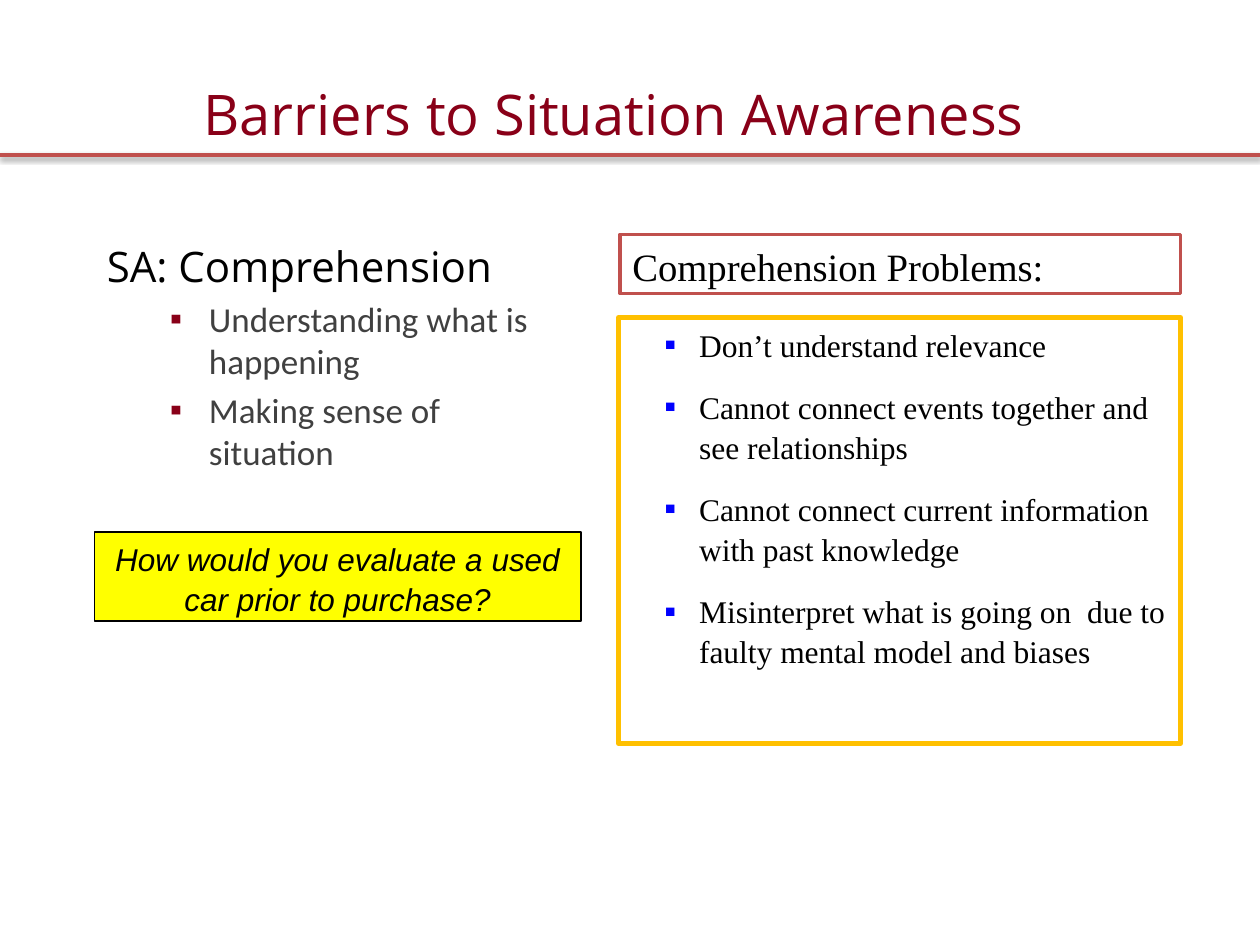
"""Build the slide on comprehension barriers to situation awareness."""
from dataclasses import dataclass
from typing import Optional

from lxml.etree import SubElement
from pptx import Presentation
from pptx.dml.color import RGBColor
from pptx.enum.shapes import MSO_CONNECTOR as Connector, MSO_SHAPE as Shape
from pptx.enum.text import MSO_ANCHOR as Anchor, PP_ALIGN as Align
from pptx.oxml.ns import qn
from pptx.util import Inches, Pt

MAROON, BRICK, GOLD, YELLOW = "890018", "C0504D", "FFC000", "FFFF00"
BLACK, WHITE, GREY, BLUE = "000000", "FFFFFF", "404040", "0000FF"


@dataclass(frozen=True)
class Bullet:
    char: str
    color: str
    percent: int
    margin: float
    hanging: float


@dataclass(frozen=True)
class Style:
    font: str
    size: float
    color: str = BLACK
    italic: bool = False
    align: Align = Align.LEFT
    before: float = 0
    spacing: float = 1.0
    bullet: Optional[Bullet] = None


@dataclass(frozen=True)
class Panel:
    left: float
    top: float
    width: float
    height: float
    line: str
    weight: float
    fill: Optional[str]
    anchor: Anchor
    style: Style
    texts: tuple[str, ...]


def rgb(color: str) -> RGBColor:
    return RGBColor.from_string(color)


def place(shape, left: float, top: float, width: float, height: float) -> None:
    shape.left, shape.top = Inches(left), Inches(top)
    shape.width, shape.height = Inches(width), Inches(height)


def add_bullet(paragraph, bullet: Bullet) -> None:
    props = paragraph._p.get_or_add_pPr()
    props.set("marL", str(Inches(bullet.margin)))
    props.set("indent", str(-Inches(bullet.hanging)))
    SubElement(SubElement(props, qn("a:buClr")), qn("a:srgbClr"), val=bullet.color)
    SubElement(props, qn("a:buSzPct"), val=str(bullet.percent * 1000))
    SubElement(props, qn("a:buFont"), typeface="Arial")
    SubElement(props, qn("a:buChar"), char=bullet.char)


def write(frame, lines: list[tuple[str, Style]], anchor: Anchor) -> None:
    frame.word_wrap = True
    frame.vertical_anchor = anchor
    for index, (text, style) in enumerate(lines):
        paragraph = frame.add_paragraph() if index else frame.paragraphs[0]
        paragraph.alignment = style.align
        paragraph.line_spacing = style.spacing
        paragraph.space_before = Pt(style.before if index else 0)
        if style.bullet:
            paragraph.level = 1
            add_bullet(paragraph, style.bullet)
        run = paragraph.add_run()
        run.text = text
        run.font.name, run.font.size = style.font, Pt(style.size)
        run.font.italic = style.italic
        run.font.color.rgb = rgb(style.color)


def add_panel(slide, panel: Panel) -> None:
    box = slide.shapes.add_shape(Shape.RECTANGLE, 0, 0, 0, 0)
    place(box, panel.left, panel.top, panel.width, panel.height)
    box.shadow.inherit = False
    if panel.fill:
        box.fill.solid()
        box.fill.fore_color.rgb = rgb(panel.fill)
    else:
        box.fill.background()
    box.line.color.rgb = rgb(panel.line)
    box.line.width = Pt(panel.weight)
    write(box.text_frame, [(text, panel.style) for text in panel.texts], panel.anchor)


def add_title_rule(slide, y: float) -> None:
    rule = slide.shapes.add_connector(
        Connector.STRAIGHT, Inches(0), Inches(y), Inches(10), Inches(y))
    rule.line.color.rgb = rgb(BRICK)
    rule.line.width = Pt(2)
    effects = SubElement(rule._element.spPr, qn("a:effectLst"))
    shadow = SubElement(effects, qn("a:outerShdw"), blurRad=str(Pt(3.1)),
                        dist=str(Pt(1.6)), dir="5400000", rotWithShape="0")
    shade = SubElement(shadow, qn("a:srgbClr"), val=BLACK)
    SubElement(shade, qn("a:alpha"), val="38000")


def main() -> None:
    deck = Presentation()
    deck.slide_width, deck.slide_height = Inches(10), Inches(7.5)
    slide = deck.slides.add_slide(deck.slide_layouts[5])
    add_title_rule(slide, 1.23)

    title = slide.shapes.title
    place(title, 0.75, 0.56, 8.25, 0.67)
    title_style = Style("Open Sans", 32, MAROON, align=Align.CENTER)
    write(title.text_frame, [("Barriers to Situation Awareness", title_style)],
          Anchor.MIDDLE)

    definition = slide.shapes.add_textbox(0, 0, 0, 0)
    place(definition, 0.75, 1.86, 3.86, 5)
    point = Style("Calibri", 20, GREY, before=4,
                  bullet=Bullet("▪", MAROON, 100, 0.81, 0.31))
    write(definition.text_frame, [
        ("SA: Comprehension", Style("Open Sans", 24)),
        ("Understanding what is happening", point),
        ("Making sense of situation", point),
    ], Anchor.TOP)

    problem = Style("Times New Roman", 18, before=13, spacing=1.05,
                    bullet=Bullet("■", BLUE, 55, 0.54, 0.27))
    heading = Style("Times New Roman", 22.1, spacing=1.05)
    question = Style("Arial", 18, italic=True, align=Align.CENTER, spacing=1.05)
    for panel in (
        Panel(4.91, 2.52, 4.46, 3.38, GOLD, 3, None, Anchor.TOP, problem, (
            "Don’t understand relevance",
            "Cannot connect events together and see relationships",
            "Cannot connect current information with past knowledge",
            "Misinterpret what is going on  due to faulty mental model and biases",
        )),
        Panel(4.92, 1.86, 4.45, 0.47, BRICK, 2, WHITE, Anchor.TOP, heading,
              ("Comprehension Problems:",)),
        Panel(0.75, 4.22, 3.86, 0.71, BLACK, 1, YELLOW, Anchor.TOP, question,
              ("How would you evaluate a used car prior to purchase?",)),
    ):
        add_panel(slide, panel)

    deck.save("out.pptx")


if __name__ == "__main__":
    main()
